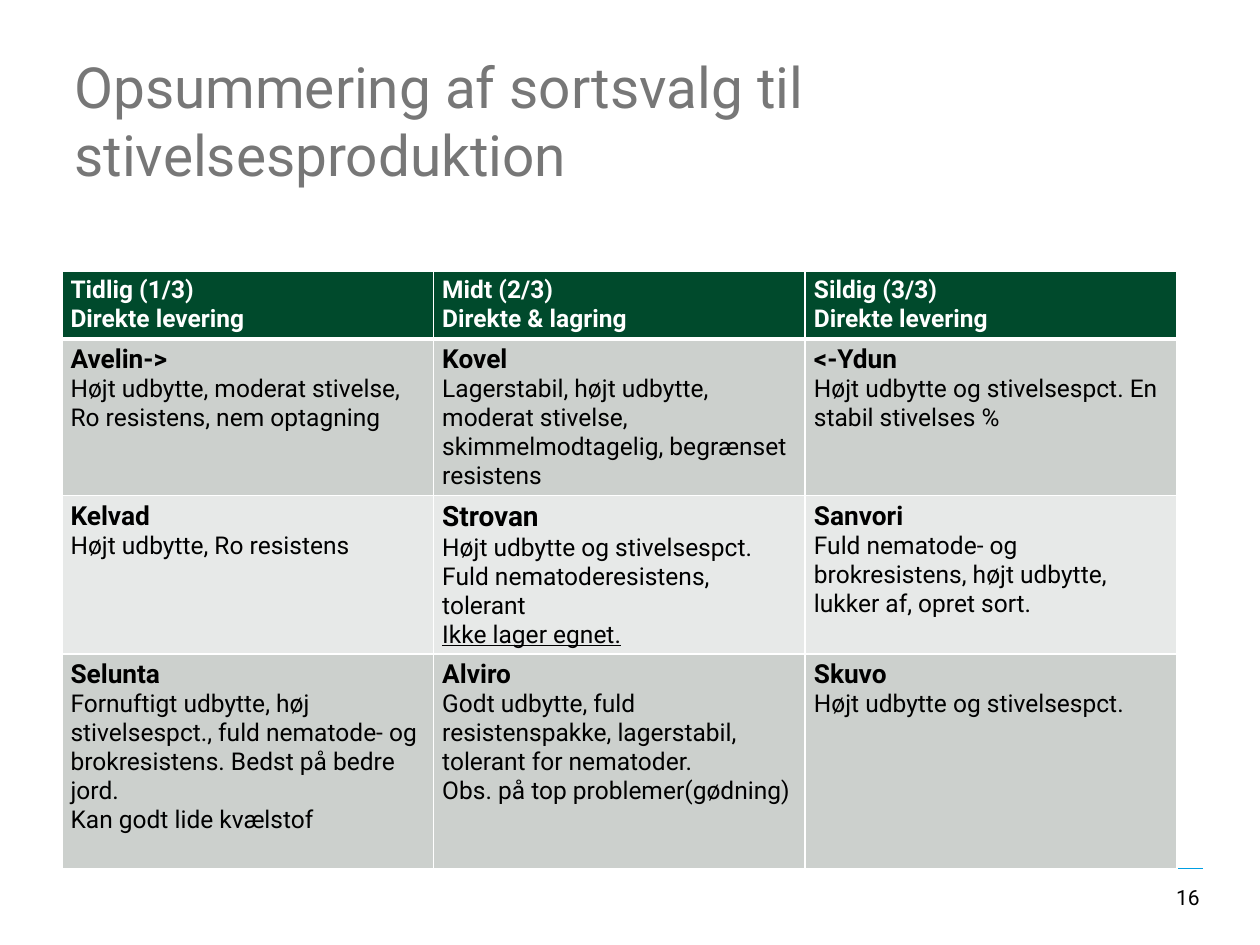
import pptx
import pptx.dml.color
import pptx.enum.shapes
import pptx.enum.text
import pptx.oxml
import pptx.oxml.ns
import pptx.util
from dataclasses import dataclass

Inches = pptx.util.Inches
Pt = pptx.util.Pt
RGB = pptx.dml.color.RGBColor.from_string


@dataclass(frozen=True)
class Theme:
    font: str = "Roboto"
    title: str = "777777"
    text: str = "000000"
    white: str = "FFFFFF"
    header: str = "004A2C"
    bands: tuple = ("CCD0CD", "E7E9E8")
    rule: str = "009FE3"
    title_size: float = 32.4
    body_size: int = 14
    name_size: int = 15
    number_size: int = 12


theme = Theme()


def add_run(p, text, size, color, bold=False):
    r = p.add_run()
    r.text = text
    r.font.name = theme.font
    r.font.size = Pt(size)
    r.font.bold = bold
    r.font.color.rgb = RGB(color)
    return r


def set_borders(cell, widths):
    tc_pr = cell._tc.get_or_add_tcPr()
    for i, (side, width) in enumerate(widths.items()):
        tc_pr.insert(i, pptx.oxml.parse_xml(
            f'<a:ln{side} {pptx.oxml.ns.nsdecls("a")} w="{Pt(width)}">'
            f'<a:solidFill><a:srgbClr val="{theme.white}"/></a:solidFill></a:ln{side}>'))


prs = pptx.Presentation()
prs.slide_width, prs.slide_height = Inches(10), Inches(7.5)
s = prs.slides.add_slide(prs.slide_layouts[5])

# Footer rule
line = s.shapes.add_connector(pptx.enum.shapes.MSO_CONNECTOR.STRAIGHT,
                              Inches(0.49), Inches(6.89), Inches(9.55), Inches(6.89))
line.line.color.rgb = RGB(theme.rule)
line.line.width = Pt(0.3)
line._element.spPr.append(pptx.oxml.parse_xml(f'<a:effectLst {pptx.oxml.ns.nsdecls("a")}/>'))

# Title
sp = s.shapes.title
sp.left, sp.top, sp.width, sp.height = Inches(0.49), Inches(0.33), Inches(6.87), Inches(1.06)
tf = sp.text_frame
tf.auto_size = pptx.enum.text.MSO_AUTO_SIZE.NONE
tf.vertical_anchor = pptx.enum.text.MSO_ANCHOR.TOP
tf.margin_top = Inches(0.08)
p = tf.paragraphs[0]
p.alignment = pptx.enum.text.PP_ALIGN.LEFT
add_run(p, "Opsummering af sortsvalg til stivelsesproduktion", theme.title_size, theme.title)

# Variety table: each cell is a list of paragraphs, the first one a name
rows = [
    [["Tidlig (1/3)", "Direkte levering"],
     ["Midt (2/3)\nDirekte & lagring"],
     ["Sildig (3/3)", "Direkte levering"]],
    [["Avelin->", "Højt udbytte, moderat stivelse, Ro resistens, nem optagning"],
     ["Kovel", "Lagerstabil, højt udbytte, moderat stivelse, skimmelmodtagelig, "
      "begrænset resistens"],
     ["<-Ydun", "Højt udbytte og stivelsespct. En stabil stivelses %"]],
    [["Kelvad", "Højt udbytte, Ro resistens"],
     ["Strovan", "Højt udbytte og stivelsespct. Fuld nematoderesistens, tolerant",
      "Ikke lager egnet."],
     ["Sanvori", "Fuld nematode- og brokresistens, højt udbytte, lukker af, opret sort."]],
    [["Selunta", "Fornuftigt udbytte, høj stivelsespct., fuld nematode- og brokresistens. "
      "Bedst på bedre jord.", "Kan godt lide kvælstof"],
     ["Alviro", "Godt udbytte, fuld resistenspakke, lagerstabil, tolerant for nematoder.",
      "Obs. på top problemer(gødning)"],
     ["Skuvo", "Højt udbytte og stivelsespct."]],
]
row_heights = [0.53, 1.24, 1.25, 1.7]
special_sizes = {"Strovan": 16}
underlined = {"Ikke lager egnet."}

table = s.shapes.add_table(len(rows), 3, Inches(0.49), Inches(2.15),
                           Inches(8.85), Inches(sum(row_heights))).table
for column in table.columns:
    column.width = Inches(2.95)

for i, (row, height) in enumerate(zip(rows, row_heights)):
    table.rows[i].height = Inches(height)
    header = i == 0
    color = theme.white if header else theme.text
    for j, paragraphs in enumerate(row):
        cell = table.cell(i, j)
        cell.margin_left = cell.margin_right = Inches(0.07)
        cell.margin_top = cell.margin_bottom = Inches(0.04)
        cell.fill.solid()
        cell.fill.fore_color.rgb = RGB(theme.header if header else theme.bands[(i - 1) % 2])
        set_borders(cell, {"L": 1, "R": 1, "T": 3 if i == 1 else 1, "B": 3 if header else 1})
        tf = cell.text_frame
        for k, text in enumerate(paragraphs):
            p = tf.paragraphs[0] if k == 0 else tf.add_paragraph()
            is_name = k == 0 and not header
            size = special_sizes.get(text, theme.name_size) if is_name else theme.body_size
            for n, part in enumerate(text.split("\n")):
                if n:
                    p.add_line_break()
                r = add_run(p, part, size, color, header or is_name)
                if part in underlined:
                    r.font.underline = True

# Slide number
sp = s.shapes.add_textbox(Inches(8.39), Inches(6.97), Inches(1.23), Inches(0.4))
tf = sp.text_frame
tf.word_wrap = True
p = tf.paragraphs[0]
p.alignment = pptx.enum.text.PP_ALIGN.RIGHT
add_run(p, "16", theme.number_size, theme.text)

prs.save("out.pptx")
